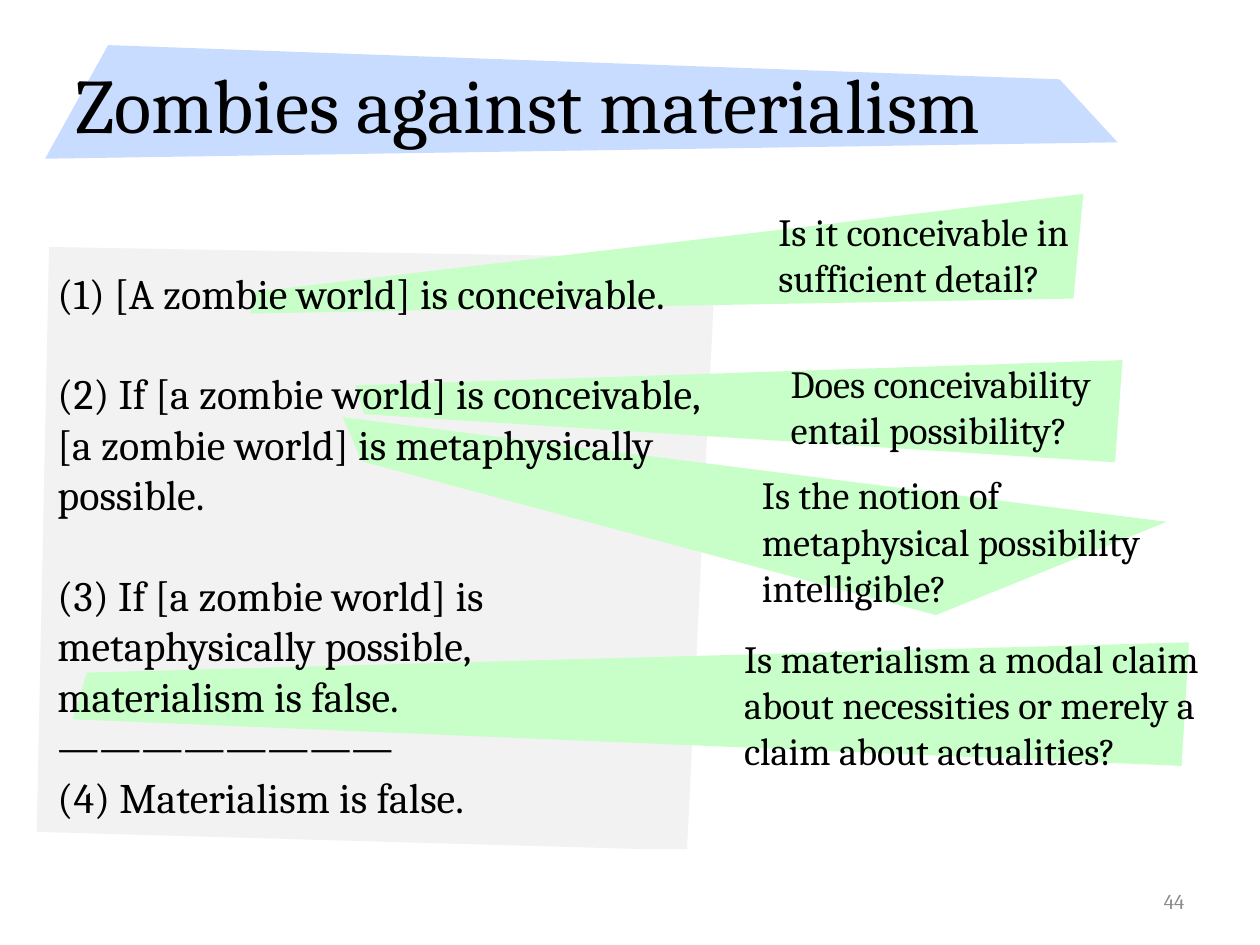
from lxml.etree import SubElement
from pptx import Presentation
from pptx.dml.color import RGBColor
from pptx.enum.text import MSO_ANCHOR, PP_ALIGN
from pptx.oxml.ns import qn
from pptx.util import Cm, Pt

BLACK = RGBColor(0, 0, 0)
DIM = RGBColor(0x8C, 0x8C, 0x8C)
GREY = RGBColor(0xF2, 0xF2, 0xF2)
BLUE = RGBColor(0xC8, 0xDC, 0xFF)
GREEN = RGBColor(0xC8, 0xFF, 0xC8)

HEAD = {"name": "Cambria", "size": Pt(44)}
BODY = {"name": "Cambria", "size": Pt(24)}
NOTE = {"name": "Cambria", "size": Pt(22)}
FOOT = {"name": "Cambria", "size": Pt(12)}
GAP = Pt(28.8)

PANEL = [(0.25, 0), (13.69, 0.23), (13.11, 12.14), (12.32, 12.14), (0, 11.79)]
RIBBON = [(1.27, 0), (20.45, 0.69), (21.62, 1.96), (0, 2.29)]

STEPS = [
    ("[A zombie world] is conceivable.", 0),
    ("(2) If [a zombie world] is conceivable, "
     "[a zombie world] is metaphysically possible.", GAP),
    ("(3) If [a zombie world] is metaphysically possible,", GAP),
    ("materialism is false.", 0),
    ("————————", 0),
    ("(4) Materialism is false.", 0),
]

NOTES = [
    ("Is it conceivable in sufficient detail?",
     (5.05, 3.91), (10.39, 0.15, 6.99, 2.13),
     [(0.03, 1.98), (16.79, 0), (16.59, 2.11), (0, 2.41)]),
    ("Does conceivability entail possibility?",
     (7.16, 7.26), (8.53, -0.13, 7.87, 2.13),
     [(0, 0.51), (15.47, 0), (15.32, 2.06), (0.18, 1.09)]),
    ("Is the notion of metaphysical possibility intelligible?",
     (6.91, 8.41), (8.2, 0.97, 8.86, 3.07),
     [(0, 0), (16.61, 2.11), (11.96, 3.99), (0.38, 0.89)]),
    ("Is materialism a modal claim about necessities "
     "or merely a claim about actualities?",
     (1.47, 12.95), (13.28, -0.28, 10.06, 3.07),
     [(0.28, 0.61), (22.5, 0), (22.35, 2.49), (0, 1.55)]),
]


def style(para, look, color=BLACK):
    for key, value in look.items():
        setattr(para.font, key, value)
    para.font.color.rgb = color


def patch(shapes, left, top, dots, color):
    spots = [(Cm(left + x), Cm(top + y)) for x, y in dots]
    pen = shapes.build_freeform(*spots[0])
    pen.add_line_segments(spots[1:], close=True)
    shape = pen.convert_to_shape()
    shape.shadow.inherit = False
    shape.fill.solid()
    shape.fill.fore_color.rgb = color
    shape.line.fill.background()


def label(shapes, box, text, look, color=BLACK, anchor=MSO_ANCHOR.TOP):
    frame = shapes.add_textbox(*map(Cm, box)).text_frame
    frame.word_wrap = True
    frame.vertical_anchor = anchor
    para = frame.paragraphs[0]
    para.text = text
    style(para, look, color)
    return frame


def title(shapes, left, top):
    patch(shapes, left, top, RIBBON, BLUE)
    box = (left + 0.36, top + 0.05, 22.86, 2.21)
    label(shapes, box, "Zombies against materialism", HEAD,
          anchor=MSO_ANCHOR.MIDDLE)


def footer(shapes, box):
    frame = label(shapes, box, "44", FOOT, DIM, MSO_ANCHOR.MIDDLE)
    frame.paragraphs[0].alignment = PP_ALIGN.RIGHT


def note(shapes, text, spot, inner, dots):
    left, top = spot
    dx, dy, width, height = inner
    group = shapes.add_group_shape().shapes
    patch(group, left, top, dots, GREEN)
    label(group, (left + dx, top + dy, width, height), text, NOTE)


def number(para):
    props = para._p.get_or_add_pPr()
    props.set("marL", str(Cm(1.14)))
    props.set("indent", str(-Cm(1.14)))
    SubElement(props, qn("a:buFont"), typeface="Cambria")
    SubElement(props, qn("a:buAutoNum"), type="arabicParenBoth")


def proof(shapes, box):
    frame = shapes.add_textbox(*map(Cm, box)).text_frame
    frame.word_wrap = True
    for i, (text, gap) in enumerate(STEPS):
        para = frame.add_paragraph() if i else frame.paragraphs[0]
        para.text = text
        if gap:
            para.space_before = gap
        if i == 0:
            number(para)
        style(para, BODY)


def main():
    deck = Presentation()
    deck.slide_width, deck.slide_height = Cm(25.4), Cm(19.05)
    shapes = deck.slides.add_slide(deck.slide_layouts[6]).shapes
    patch(shapes, 0.74, 4.98, PANEL, GREY)
    title(shapes, 0.91, 0.91)
    footer(shapes, (18.21, 17.65, 5.92, 1.02))
    for item in NOTES:
        note(shapes, *item)
    proof(shapes, (0.91, 5.26, 13.56, 11.53))
    deck.save("out.pptx")


if __name__ == "__main__":
    main()
